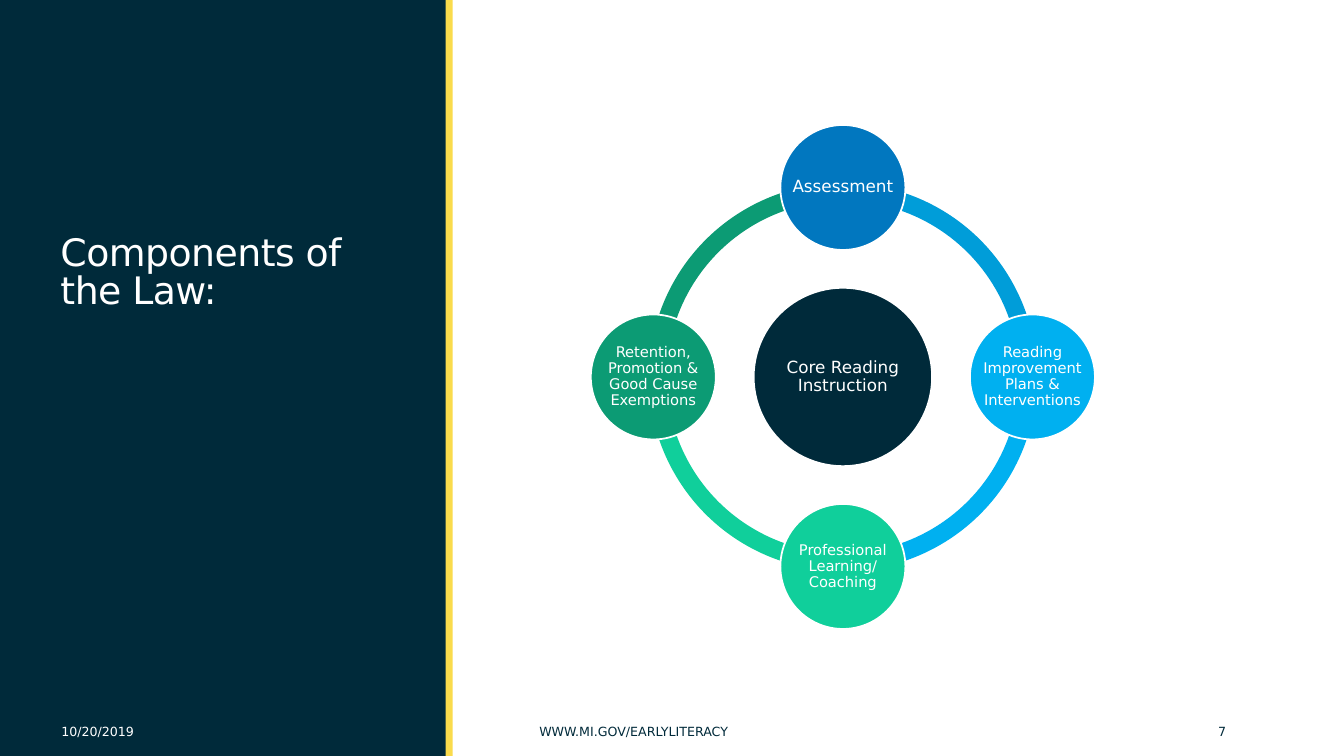
from math import cos, radians, sin

from pptx import Presentation
from pptx.dml.color import RGBColor
from pptx.enum.shapes import MSO_SHAPE
from pptx.enum.text import MSO_ANCHOR, MSO_AUTO_SIZE, PP_ALIGN
from pptx.util import Inches, Pt

NAVY, WHITE, YELLOW = "002A3A", "FFFFFF", "FADB4C"
CENTER_X, CENTER_Y = 8.36, 3.74
RING_SIZE, ORBIT = 3.85, 1.88
CORE_SIZE, COMPONENT_SIZE, LABEL_HEIGHT = 1.77, 1.24, 0.88

# Label, text size, circle colour, colour of the arc to the next circle
COMPONENTS = [
    ("Assessment", 12, "0177BF", "009DD9"),
    ("Reading Improvement Plans & Interventions", 10.5, "00B0F0", "00B0F0"),
    ("Professional Learning/ Coaching", 10.5, "10CF9B", "10CF9B"),
    ("Retention, Promotion & Good Cause Exemptions", 10.5, "0C9B74", "0C9B74"),
]


def add_filled(kind, left, top, width, height, color, outline=None):
    shape = slide.shapes.add_shape(
        kind, Inches(left), Inches(top), Inches(width), Inches(height))
    shape.shadow.inherit = False
    shape.fill.solid()
    shape.fill.fore_color.rgb = RGBColor.from_string(color)
    if outline:
        shape.line.color.rgb = RGBColor.from_string(outline)
        shape.line.width = Pt(1.25)
    else:
        shape.line.fill.background()
    return shape


def write(shape, text, size=9, color=WHITE, align=PP_ALIGN.LEFT,
          anchor=MSO_ANCHOR.MIDDLE, line_spacing=1.0, inset=None, tracking=None):
    """Fill a shape's text frame; inset is in inches, tracking in points."""
    frame = shape.text_frame
    frame.word_wrap = True
    frame.auto_size = MSO_AUTO_SIZE.NONE
    frame.vertical_anchor = anchor
    if inset is not None:
        frame.margin_left = frame.margin_right = Inches(inset)
        frame.margin_top = frame.margin_bottom = Inches(inset)
    paragraph = frame.paragraphs[0]
    paragraph.alignment = align
    paragraph.line_spacing = line_spacing
    run = paragraph.add_run()
    run.text = text
    run.font.name = "DejaVu Sans"
    run.font.size = Pt(size)
    run.font.color.rgb = RGBColor.from_string(color)
    if tracking is not None:
        run.font._element.set("spc", str(round(tracking * 100)))


presentation = Presentation()
presentation.slide_width = Inches(13.33)
presentation.slide_height = Inches(7.5)
slide = presentation.slides.add_slide(presentation.slide_layouts[5])

# Side panel and title
add_filled(MSO_SHAPE.RECTANGLE, 0, 0, 4.43, 7.5, NAVY)
add_filled(MSO_SHAPE.RECTANGLE, 4.42, 0, 0.07, 7.5, YELLOW)

title = slide.shapes.title
title.left, title.top = Inches(0.5), Inches(0.65)
title.width, title.height = Inches(3.5), Inches(2.5)
write(title, "Components of the Law:", size=27, anchor=MSO_ANCHOR.BOTTOM,
      line_spacing=0.85, tracking=-0.4)
slide.shapes._spTree.append(title._element)  # bring in front of the panel

# Footer
for text, left, width, color, align in [
    ("10/20/2019", 0.51, 2.86, WHITE, PP_ALIGN.LEFT),
    ("WWW.MI.GOV/EARLYLITERACY", 5.25, 5.08, NAVY, PP_ALIGN.LEFT),
    ("7", 10.83, 1.43, NAVY, PP_ALIGN.RIGHT),
]:
    footer = slide.shapes.add_textbox(
        Inches(left), Inches(7.06), Inches(width), Inches(0.4))
    write(footer, text, color=color, align=align)

# Ring: one quarter arc from each component to the next, clockwise from the top
for index, (_, _, _, arc_color) in enumerate(COMPONENTS):
    arc = add_filled(MSO_SHAPE.BLOCK_ARC, CENTER_X - RING_SIZE / 2,
                     CENTER_Y - RING_SIZE / 2, RING_SIZE, RING_SIZE, arc_color)
    arc.adjustments[0] = (162 + 54 * index) % 216  # 54 units are 90 degrees
    arc.adjustments[1] = 54 * index
    arc.adjustments[2] = 0.046

# Core and its components
core = add_filled(MSO_SHAPE.OVAL, CENTER_X - CORE_SIZE / 2, CENTER_Y - CORE_SIZE / 2,
                  CORE_SIZE, CORE_SIZE, NAVY, outline=WHITE)
write(core, "Core Reading Instruction", size=12, align=PP_ALIGN.CENTER,
      line_spacing=0.9, inset=0.02)

for index, (text, size, color, _) in enumerate(COMPONENTS):
    angle = radians(90 * index - 90)
    x = CENTER_X + ORBIT * cos(angle)
    y = CENTER_Y + ORBIT * sin(angle)
    left = x - COMPONENT_SIZE / 2
    add_filled(MSO_SHAPE.OVAL, left, y - COMPONENT_SIZE / 2,
               COMPONENT_SIZE, COMPONENT_SIZE, color, outline=WHITE)
    # The label spans the full circle, wider than the oval's own text area
    label = slide.shapes.add_textbox(Inches(left), Inches(y - LABEL_HEIGHT / 2),
                                     Inches(COMPONENT_SIZE), Inches(LABEL_HEIGHT))
    write(label, text, size=size, align=PP_ALIGN.CENTER, line_spacing=0.9, inset=0.01)

presentation.save("out.pptx")
